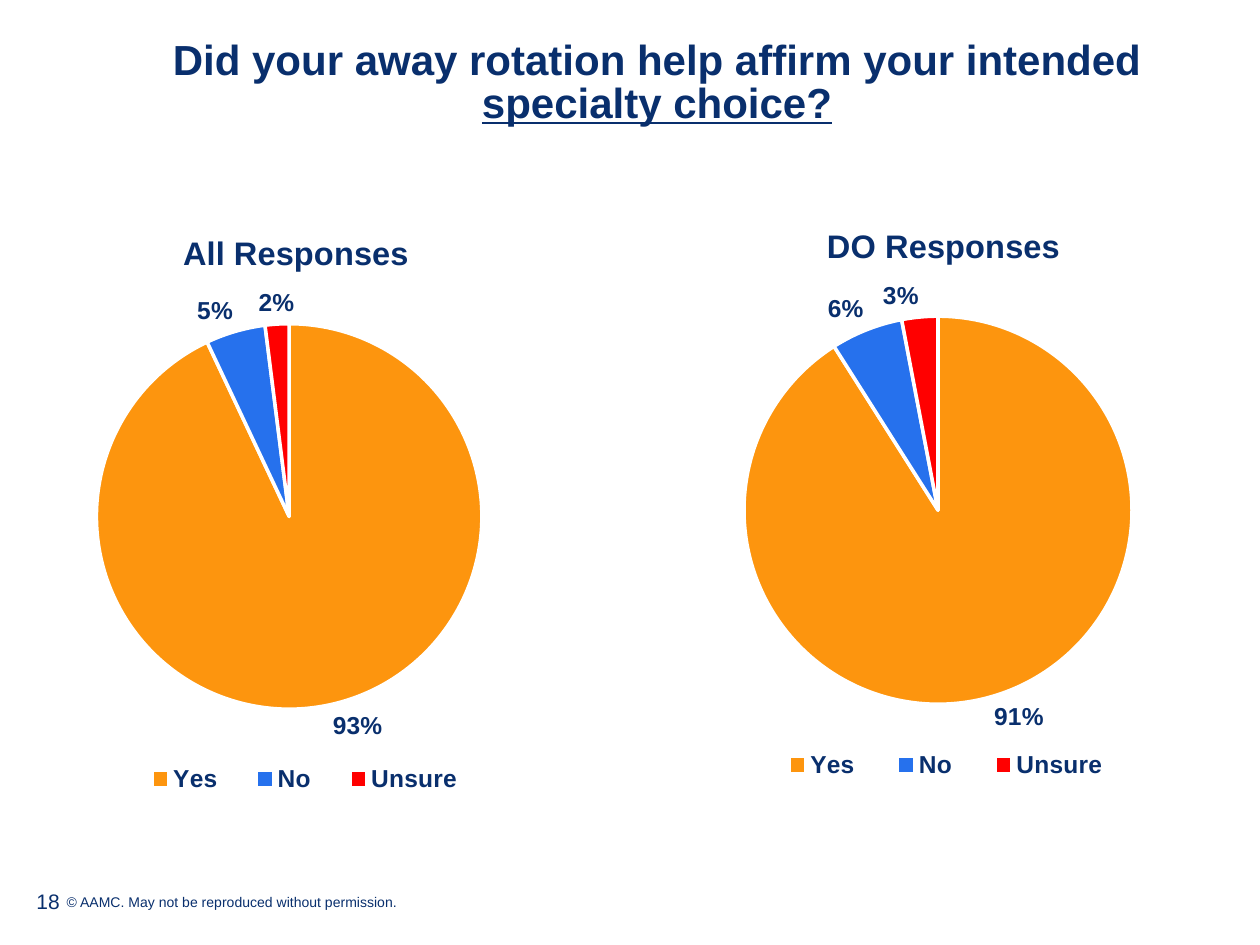
from dataclasses import dataclass

from lxml import etree
from pptx import Presentation
from pptx.chart.data import CategoryChartData
from pptx.dml.color import RGBColor
from pptx.enum.chart import XL_CHART_TYPE, XL_LABEL_POSITION, XL_LEGEND_POSITION
from pptx.enum.text import MSO_ANCHOR, PP_ALIGN
from pptx.oxml.ns import qn
from pptx.util import Inches, Pt

PIE = XL_CHART_TYPE.PIE
OUTSIDE = XL_LABEL_POSITION.OUTSIDE_END
BOTTOM = XL_LEGEND_POSITION.BOTTOM
CENTER = PP_ALIGN.CENTER
MIDDLE, LOW = MSO_ANCHOR.MIDDLE, MSO_ANCHOR.BOTTOM


@dataclass(frozen=True)
class Theme:
    face: str = "Arial"
    navy: RGBColor = RGBColor(0x09, 0x2F, 0x6D)
    white: RGBColor = RGBColor(0xFF, 0xFF, 0xFF)
    slices: tuple = (
        RGBColor(0xFD, 0x95, 0x0E),
        RGBColor(0x26, 0x71, 0xED),
        RGBColor(0xFF, 0x00, 0x00),
    )
    title: float = 24
    head: float = 18.6
    label: float = 14
    number: float = 12
    note: float = 8


THEME = Theme()
ANSWERS = ("Yes", "No", "Unsure")


def style(font, size, bold=False):
    font.name = THEME.face
    font.size = Pt(size)
    font.bold = bold
    font.color.rgb = THEME.navy


def set_layout(node, index, inner=False, **sizes):
    """Give a chart part a fixed place, in fractions of the chart."""
    for old in node.findall(qn("c:layout")):
        node.remove(old)
    layout = etree.Element(qn("c:layout"))
    manual = etree.SubElement(layout, qn("c:manualLayout"))
    if inner:
        etree.SubElement(manual, qn("c:layoutTarget")).set("val", "inner")
    for axis in ("x", "y"):
        etree.SubElement(manual, qn(f"c:{axis}Mode")).set("val", "edge")
    for key in ("x", "y", "w", "h"):
        if key in sizes:
            etree.SubElement(manual, qn(f"c:{key}")).set("val", f"{sizes[key]:.4f}")
    node.insert(index, layout)


def add_title(slide, left, top, width, height):
    title = slide.shapes.title
    title.left, title.top = Inches(left), Inches(top)
    title.width, title.height = Inches(width), Inches(height)
    frame = title.text_frame
    frame.word_wrap = True
    frame.vertical_anchor = LOW
    frame.margin_left = frame.margin_right = 0
    frame.margin_top = frame.margin_bottom = 0
    para = frame.paragraphs[0]
    para.alignment = CENTER
    para.line_spacing = 0.85
    style(para.font, THEME.title, True)
    para.add_run().text = "Did your away rotation help affirm your intended "
    last = para.add_run()
    last.text = "specialty choice?"
    last.font.underline = True


def add_pie(slide, box, name, values, size, mid, key):
    """Pie of the given size, centred across the box and mid inches down it."""
    left, top, width, height = box
    data = CategoryChartData(number_format="0")
    data.categories = ANSWERS
    data.add_series(name, values)
    chart = slide.shapes.add_chart(PIE, *map(Inches, box), data).chart
    chart.font.name = THEME.face
    chart.font.size = Pt(THEME.label)
    chart.font.color.rgb = THEME.navy

    # Heading
    chart.has_title = True
    para = chart.chart_title.text_frame.paragraphs[0]
    para.text = name
    style(para.font, THEME.head, True)
    style(para.runs[0].font, THEME.head, True)
    set_layout(chart.chart_title._element, 1, x=0.36, y=0.05)

    # Slices
    plot = chart.plots[0]
    plot.vary_by_categories = True
    for i, color in enumerate(THEME.slices):
        form = plot.series[0].points[i].format
        form.fill.solid()
        form.fill.fore_color.rgb = color
        form.line.color.rgb = THEME.white
        form.line.width = Pt(2)
    area = chart._chartSpace.find(f".//{qn('c:plotArea')}")
    set_layout(area, 0, inner=True,
               x=(width - size) / 2 / width, y=(mid - size / 2) / height,
               w=size / width, h=size / height)

    # Percentages
    plot.has_data_labels = True
    labels = plot.data_labels
    labels.show_percentage = True
    labels.show_value = False
    labels.number_format = "0%"
    labels.number_format_is_linked = False
    labels.position = OUTSIDE
    style(labels.font, THEME.label, True)

    # Legend
    chart.has_legend = True
    legend = chart.legend
    legend.position = BOTTOM
    legend.include_in_layout = False
    style(legend.font, THEME.label, True)
    set_layout(legend._element, 1, x=key[0], y=key[1], w=0.46, h=0.07)


def add_note(slide, left, top, width, height, text, size):
    box = slide.shapes.add_textbox(*map(Inches, (left, top, width, height)))
    frame = box.text_frame
    frame.word_wrap = True
    frame.vertical_anchor = MIDDLE
    para = frame.paragraphs[0]
    para.text = text
    style(para.font, size)


def main():
    deck = Presentation()
    deck.slide_width, deck.slide_height = Inches(10), Inches(7.5)
    slide = deck.slides.add_slide(deck.slide_layouts[5])

    add_title(slide, 0.63, 0.33, 9.17, 0.68)
    add_pie(slide, (-0.88, 1.55, 6.35, 4.85), "All Responses", (93, 5, 2),
            3.06, 2.55, (0.29, 0.92))
    add_pie(slide, (4.13, 1.49, 6.63, 4.85), "DO Responses", (91, 6, 3),
            3.08, 2.56, (0.28, 0.91))

    # Footer
    add_note(slide, 0.43, 7.04, 8.22, 0.23,
             "© AAMC. May not be reproduced without permission.", THEME.note)
    add_note(slide, 0.19, 6.95, 2.25, 0.4, "18", THEME.number)

    deck.save("out.pptx")


if __name__ == "__main__":
    main()
